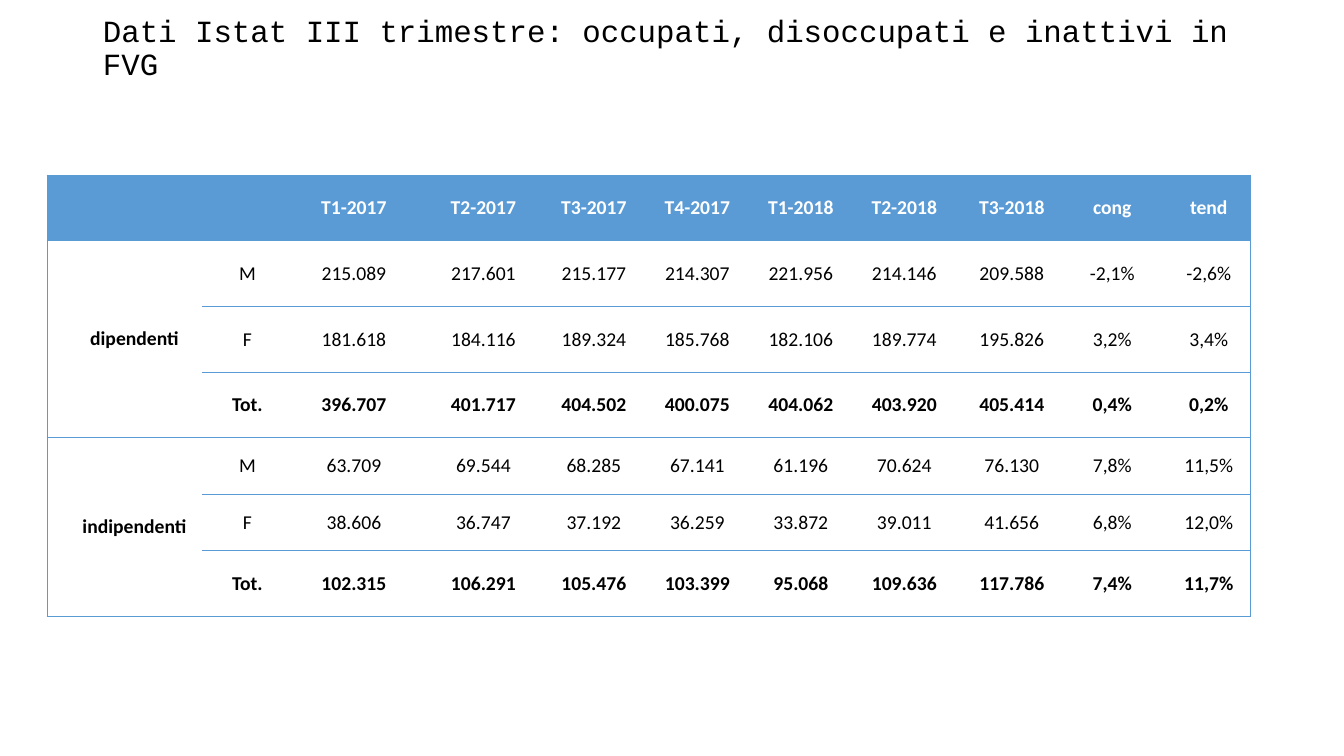
from dataclasses import dataclass

import pptx
import pptx.dml.color
import pptx.enum.text
import pptx.oxml.ns
import pptx.util
from lxml import etree

PX = 12192000 / 1344  # EMU in one px


@dataclass(frozen=True)
class Theme:
    blue: str = "5B9BD5"
    white: str = "FFFFFF"
    black: str = "000000"
    title_font: str = "Courier New"
    table_font: str = "Calibri"
    title_size: int = 22
    table_size: int = 14
    table_leading: int = 18
    border: float = 0.5


@dataclass(frozen=True)
class Group:
    name: str
    rows: tuple[str, ...]


THEME = Theme()
TITLE = "Dati Istat III trimestre: occupati, disoccupati e inattivi in FVG"
HEADERS = "T1-2017 T2-2017 T3-2017 T4-2017 T1-2018 T2-2018 T3-2018 cong tend"
GROUPS = (
    Group("dipendenti", (
        "M 215.089 217.601 215.177 214.307 221.956 214.146 209.588 -2,1% -2,6%",
        "F 181.618 184.116 189.324 185.768 182.106 189.774 195.826 3,2% 3,4%",
        "Tot. 396.707 401.717 404.502 400.075 404.062 403.920 405.414 0,4% 0,2%",
    )),
    Group("indipendenti", (
        "M 63.709 69.544 68.285 67.141 61.196 70.624 76.130 7,8% 11,5%",
        "F 38.606 36.747 37.192 36.259 33.872 39.011 41.656 6,8% 12,0%",
        "Tot. 102.315 106.291 105.476 103.399 95.068 109.636 117.786 7,4% 11,7%",
    )),
)
TABLE_LEFT, TABLE_TOP = 47, 175
COLUMN_WIDTHS = (155, 71, 142, 117, 104, 103, 104, 103, 112, 89, 104)
ROW_HEIGHTS = (65, 66, 66, 65, 57, 56, 66)
CELL_INSET = 7
FIRST_LINE_INDENT = 20


def px(length: int) -> pptx.util.Emu:
    return pptx.util.Emu(round(length * PX))


def rgb(color: str) -> pptx.dml.color.RGBColor:
    return pptx.dml.color.RGBColor.from_string(color)


def set_borders(cell, sides: str) -> None:
    """Draw the sides named among L, R, T and B; clear the others."""
    tc_pr = cell._tc.get_or_add_tcPr()
    qn = pptx.oxml.ns.qn
    for side in "LRTB":
        ln = etree.SubElement(tc_pr, qn(f"a:ln{side}"), w=str(pptx.util.Pt(THEME.border)))
        if side in sides:
            fill = etree.SubElement(ln, qn("a:solidFill"))
            etree.SubElement(fill, qn("a:srgbClr"), val=THEME.blue)
        else:
            etree.SubElement(ln, qn("a:noFill"))


def write_cell(cell, text: str, bold: bool, color: str) -> None:
    cell.margin_left = cell.margin_right = px(CELL_INSET)
    cell.margin_top = cell.margin_bottom = 0
    cell.vertical_anchor = pptx.enum.text.MSO_ANCHOR.MIDDLE
    cell.text = text
    p = cell.text_frame.paragraphs[0]
    p.alignment = pptx.enum.text.PP_ALIGN.CENTER
    p.line_spacing = pptx.util.Pt(THEME.table_leading)
    p._p.get_or_add_pPr().set("indent", str(px(FIRST_LINE_INDENT)))
    p.font.name = THEME.table_font
    p.font.size = pptx.util.Pt(THEME.table_size)
    p.font.bold = bold
    p.font.color.rgb = rgb(color)


def add_title(s) -> None:
    tf = s.shapes.add_textbox(px(93), px(18), px(1159), px(62)).text_frame
    tf.word_wrap = True
    tf.vertical_anchor = pptx.enum.text.MSO_ANCHOR.MIDDLE
    p = tf.paragraphs[0]
    p.text = TITLE
    p.line_spacing = 0.9
    p.font.name = THEME.title_font
    p.font.size = pptx.util.Pt(THEME.title_size)
    p.font.color.rgb = rgb(THEME.black)


def table_rows() -> list[list[str]]:
    rows = [["", "", *HEADERS.split()]]
    for group in GROUPS:
        for i, row in enumerate(group.rows):
            rows.append([group.name if i == 0 else "", *row.split()])
    return rows


def add_employment_table(s) -> None:
    rows = table_rows()
    last_column = len(COLUMN_WIDTHS) - 1
    table = s.shapes.add_table(
        len(rows), len(COLUMN_WIDTHS), px(TABLE_LEFT), px(TABLE_TOP),
        px(sum(COLUMN_WIDTHS)), px(sum(ROW_HEIGHTS)),
    ).table
    table.horz_banding = False
    for column, width in zip(table.columns, COLUMN_WIDTHS):
        column.width = px(width)
    for row, height in zip(table.rows, ROW_HEIGHTS):
        row.height = px(height)

    for r, values in enumerate(rows):
        header = r == 0
        for c, value in enumerate(values):
            cell = table.cell(r, c)
            sides = "TB" + ("L" if c == 0 else "") + ("R" if c == last_column else "")
            set_borders(cell, sides)
            if header:
                cell.fill.solid()
                cell.fill.fore_color.rgb = rgb(THEME.blue)
            else:
                cell.fill.background()
            bold = header or c == 0 or values[1] == "Tot."
            write_cell(cell, value, bold, THEME.white if header else THEME.black)

    top = 1
    for group in GROUPS:
        bottom = top + len(group.rows) - 1
        table.cell(top, 0).merge(table.cell(bottom, 0))
        top = bottom + 1


def main() -> None:
    prs = pptx.Presentation()
    prs.slide_width, prs.slide_height = px(1344), px(756)
    s = prs.slides.add_slide(prs.slide_layouts[6])
    add_title(s)
    add_employment_table(s)
    prs.save("out.pptx")


if __name__ == "__main__":
    main()
